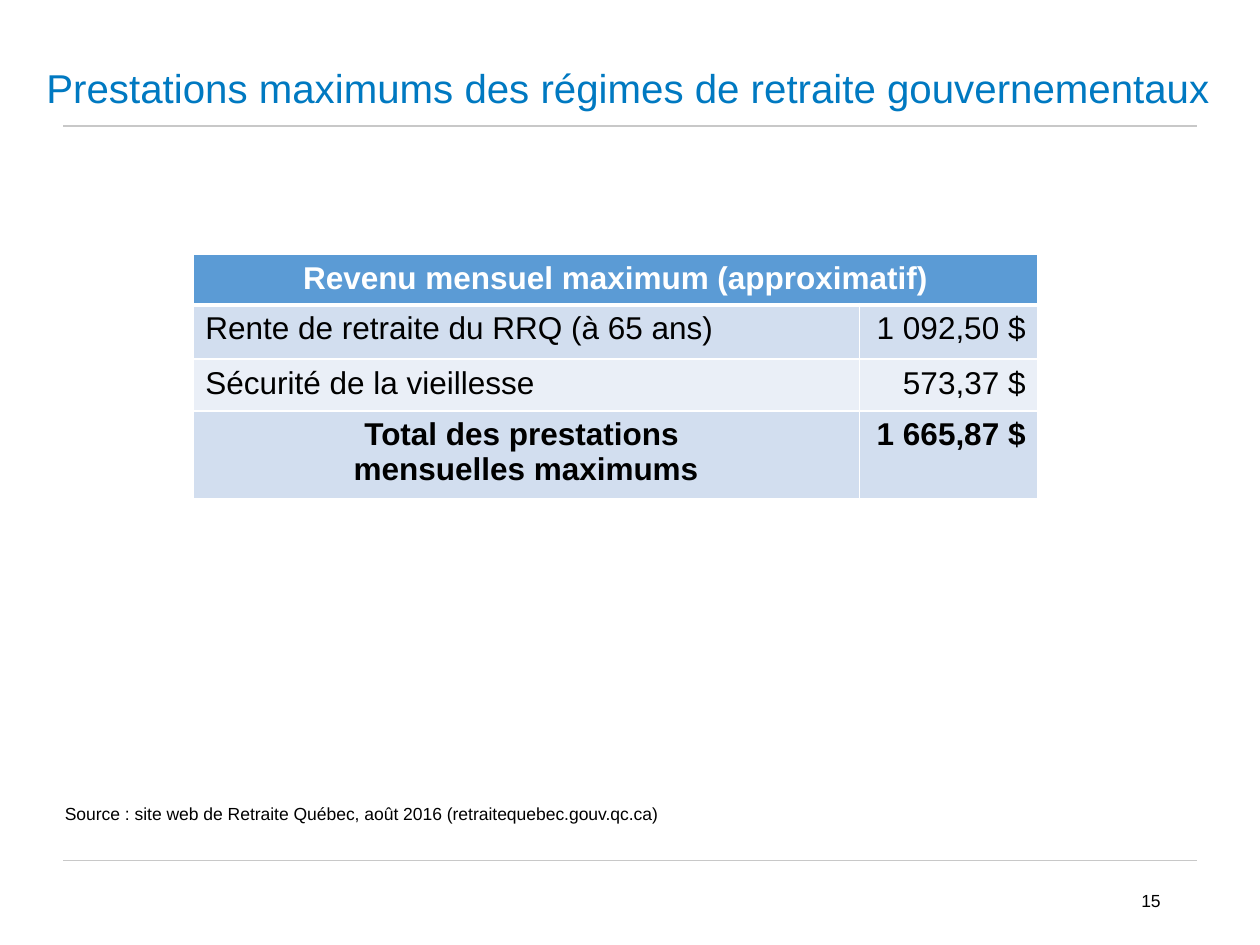
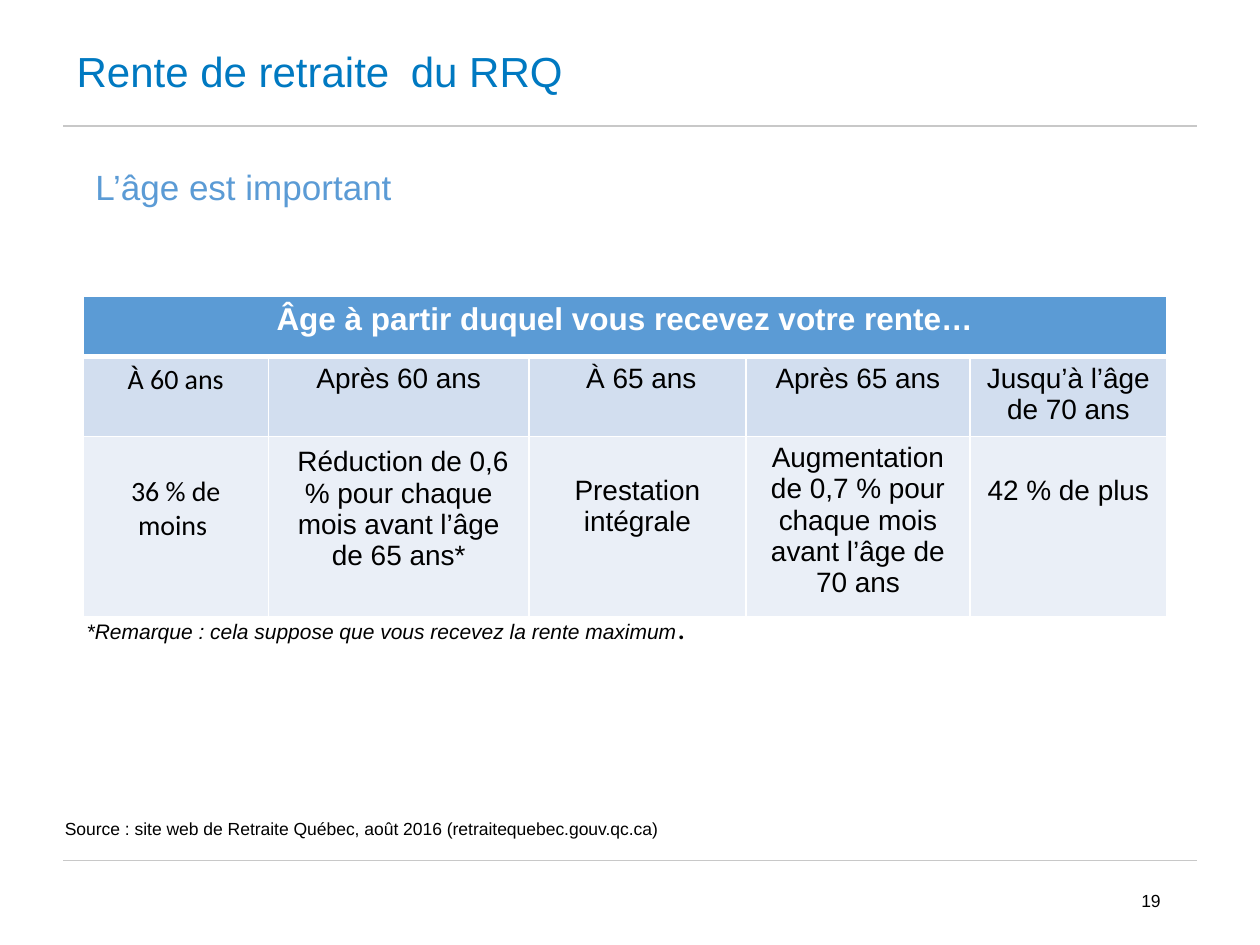
from dataclasses import dataclass
from typing import Optional

from lxml import etree
from pptx import Presentation
from pptx import util as u
from pptx.dml.color import RGBColor
from pptx.enum import shapes, text
from pptx.oxml import ns

SLIDE_WIDTH, SLIDE_HEIGHT = u.Inches(10), u.Inches(7.5)
GRID_COLUMNS, GRID_ROWS = 100, 75
LEFT, CENTER, RIGHT = text.PP_ALIGN.LEFT, text.PP_ALIGN.CENTER, text.PP_ALIGN.RIGHT
TOP, MIDDLE, BOTTOM = text.MSO_ANCHOR.TOP, text.MSO_ANCHOR.MIDDLE, text.MSO_ANCHOR.BOTTOM


@dataclass(frozen=True)
class Theme:
    title: str = "0079C1"
    accent: str = "5B9BD5"
    band_dark: str = "D2DEEF"
    band_light: str = "EAEFF7"
    rule: str = "C8C8C8"
    ink: str = "000000"
    paper: str = "FFFFFF"
    font: str = "Arial"
    second_font: str = "Calibri"
    title_size: int = 24
    long_title_size: int = 23
    title_gap_size: int = 44
    subtitle_size: int = 20
    table_size: int = 18
    small_table_size: int = 16
    remark_size: int = 12
    footer_size: int = 10
    border: int = 1
    header_border: int = 3


THEME = Theme()


@dataclass(frozen=True)
class Box:
    left: float
    top: float
    width: float
    height: float

    def place(self) -> tuple:
        return (columns(self.left), rows(self.top), columns(self.width), rows(self.height))


@dataclass(frozen=True)
class Words:
    content: str
    size: int
    color: str = THEME.ink
    font: str = THEME.font
    bold: bool = False
    italic: bool = False


@dataclass(frozen=True)
class Entry:
    words: tuple
    align: text.PP_ALIGN = CENTER
    lines_above: int = 0


@dataclass(frozen=True)
class Grid:
    left: float
    top: float
    widths: tuple
    heights: tuple
    heading: str
    body: tuple


def columns(count: float) -> int:
    return round(SLIDE_WIDTH * count / GRID_COLUMNS)


def rows(count: float) -> int:
    return round(SLIDE_HEIGHT * count / GRID_ROWS)


def write(paragraph, words: tuple, align: text.PP_ALIGN) -> None:
    paragraph.alignment = align
    for part in words:
        for index, line in enumerate(part.content.split("\n")):
            if index:
                paragraph.add_line_break()
            run = paragraph.add_run()
            run.text = line
            run.font.size = u.Pt(part.size)
            run.font.name = part.font
            run.font.bold = part.bold
            run.font.italic = part.italic
            run.font.color.rgb = RGBColor.from_string(part.color)


def draw_text(slide, box: Box, words: tuple, align: text.PP_ALIGN = LEFT,
              anchor: text.MSO_ANCHOR = TOP, spacing: Optional[float] = None,
              flush: bool = False) -> None:
    frame = slide.shapes.add_textbox(*box.place()).text_frame
    frame.word_wrap = True
    frame.vertical_anchor = anchor
    if flush:
        frame.margin_left = frame.margin_right = frame.margin_top = frame.margin_bottom = 0
    paragraph = frame.paragraphs[0]
    if spacing:
        paragraph.line_spacing = spacing
    write(paragraph, words, align)


def draw_rule(slide, top: float) -> None:
    rule = slide.shapes.add_connector(shapes.MSO_CONNECTOR.STRAIGHT, columns(5), rows(top),
                                      columns(95), rows(top))
    rule.line.color.rgb = RGBColor.from_string(THEME.rule)
    rule.line.width = u.Pt(0.75)
    etree.SubElement(rule._element.spPr, ns.qn("a:effectLst"))


def draw_borders(cell, row: int) -> None:
    properties = cell._tc.get_or_add_tcPr()
    weights = {
        "lnL": THEME.border,
        "lnR": THEME.border,
        "lnT": THEME.header_border if row == 1 else THEME.border,
        "lnB": THEME.header_border if row == 0 else THEME.border,
    }
    for side, weight in weights.items():
        border = etree.SubElement(properties, ns.qn(f"a:{side}"), w=str(u.Pt(weight)))
        fill = etree.SubElement(border, ns.qn("a:solidFill"))
        etree.SubElement(fill, ns.qn("a:srgbClr"), val=THEME.paper)


def draw_table(slide, grid: Grid) -> None:
    box = Box(grid.left, grid.top, sum(grid.widths), sum(grid.heights))
    table = slide.shapes.add_table(len(grid.heights), len(grid.widths), *box.place()).table
    for column, width in zip(table.columns, grid.widths):
        column.width = columns(width)
    for index, (row, height) in enumerate(zip(table.rows, grid.heights)):
        row.height = rows(height)
        band = THEME.band_dark if index % 2 else THEME.band_light
        for cell in row.cells:
            draw_borders(cell, index)
            cell.fill.solid()
            cell.fill.fore_color.rgb = RGBColor.from_string(band if index else THEME.accent)
    heading = table.cell(0, 0)
    heading.merge(table.cell(0, len(grid.widths) - 1))
    write(heading.text_frame.paragraphs[0],
          (Words(grid.heading, THEME.table_size, THEME.paper, bold=True),), CENTER)
    for row, entries in enumerate(grid.body, start=1):
        for column, entry in enumerate(entries):
            cell = table.cell(row, column)
            line_height = u.Pt(1.15 * entry.words[0].size)
            cell.margin_top = u.Inches(0.05) + entry.lines_above * line_height
            write(cell.text_frame.paragraphs[0], entry.words, entry.align)


def start_slide(deck, title_box: Box, title: tuple, number: int, source_top: float):
    slide = deck.slides.add_slide(deck.slide_layouts[6])
    for top in (68.3, 10):
        draw_rule(slide, top)
    draw_text(slide, title_box, title, anchor=MIDDLE, spacing=0.9)
    draw_text(slide, Box(70.6, 69.5, 22.5, 4), (Words(str(number), THEME.footer_size),),
              RIGHT, MIDDLE)
    source = "Source : site web de Retraite Québec, août 2016 (retraitequebec.gouv.qc.ca)"
    draw_text(slide, Box(5.15, source_top, 89.9, 2.3), (Words(source, THEME.footer_size),),
              anchor=BOTTOM, flush=True)
    return slide


def amount_row(label: str, amount: str, align: text.PP_ALIGN = LEFT, bold: bool = False) -> tuple:
    return (Entry((Words(label, THEME.table_size, bold=bold),), align),
            Entry((Words(amount, THEME.table_size, bold=bold),), RIGHT))


def age_entry(content: str, lines_above: int = 0, font: str = THEME.font) -> Entry:
    return Entry((Words(content, THEME.small_table_size, font=font),), lines_above=lines_above)


def add_maximum_benefits(deck) -> None:
    title = Words("Prestations maximums des régimes de retraite gouvernementaux",
                  THEME.long_title_size, THEME.title)
    slide = start_slide(deck, Box(2.7, 2.2, 97, 10), (title,), 15, 63.1)
    draw_table(slide, Grid(
        15.3, 20.2, (52.9, 14.2), (4, 4.3, 4.1, 6.6),
        "Revenu mensuel maximum (approximatif)",
        (amount_row("Rente de retraite du RRQ (à 65 ans)", "1 092,50 $"),
         amount_row("Sécurité de la vieillesse", "573,37 $"),
         amount_row("Total des prestations \nmensuelles maximums", "1 665,87 $", CENTER, True)),
    ))


def add_pension_ages(deck) -> None:
    title = (Words("Rente de retraite", THEME.title_size, THEME.title),
             Words(" ", THEME.title_gap_size, THEME.title),
             Words("du RRQ", THEME.title_size, THEME.title))
    slide = start_slide(deck, Box(5.1, 0, 90, 10), title, 19, 64.3)
    draw_text(slide, Box(6.6, 13, 90, 6.4),
              (Words("L’âge est important", THEME.subtitle_size, THEME.accent),), spacing=0.9)
    reduction = Entry((
        Words(" ", THEME.table_size),
        Words("Réduction de 0,6 % pour chaque mois avant l’âge de 65 ans*",
              THEME.small_table_size),
    ))
    ages = (age_entry("À 60 ans", font=THEME.second_font), age_entry("Après 60 ans"),
            age_entry(" À 65 ans"), age_entry("Après 65 ans"),
            age_entry("Jusqu’à l’âge de 70 ans"))
    effects = (age_entry("36 % de moins ", 1, THEME.second_font), reduction,
               age_entry("Prestation intégrale", 1),
               age_entry("Augmentation de 0,7 % pour chaque mois avant l’âge de 70 ans"),
               age_entry("42 % de plus", 1))
    draw_table(slide, Grid(
        6.6, 23.5, (14.7, 20.7, 17.2, 17.8, 15.6), (4.8, 5.9, 13.3),
        "Âge à partir duquel vous recevez votre rente…", (ages, effects),
    ))
    draw_text(slide, Box(5.9, 47.8, 65.7, 4), (
        Words("*Remarque : cela suppose que vous recevez la rente maximum",
              THEME.remark_size, italic=True),
        Words(".", THEME.table_size, font=THEME.second_font),
    ))


def main() -> None:
    deck = Presentation()
    deck.slide_width, deck.slide_height = SLIDE_WIDTH, SLIDE_HEIGHT
    add_maximum_benefits(deck)
    add_pension_ages(deck)
    deck.save("out.pptx")


if __name__ == "__main__":
    main()
